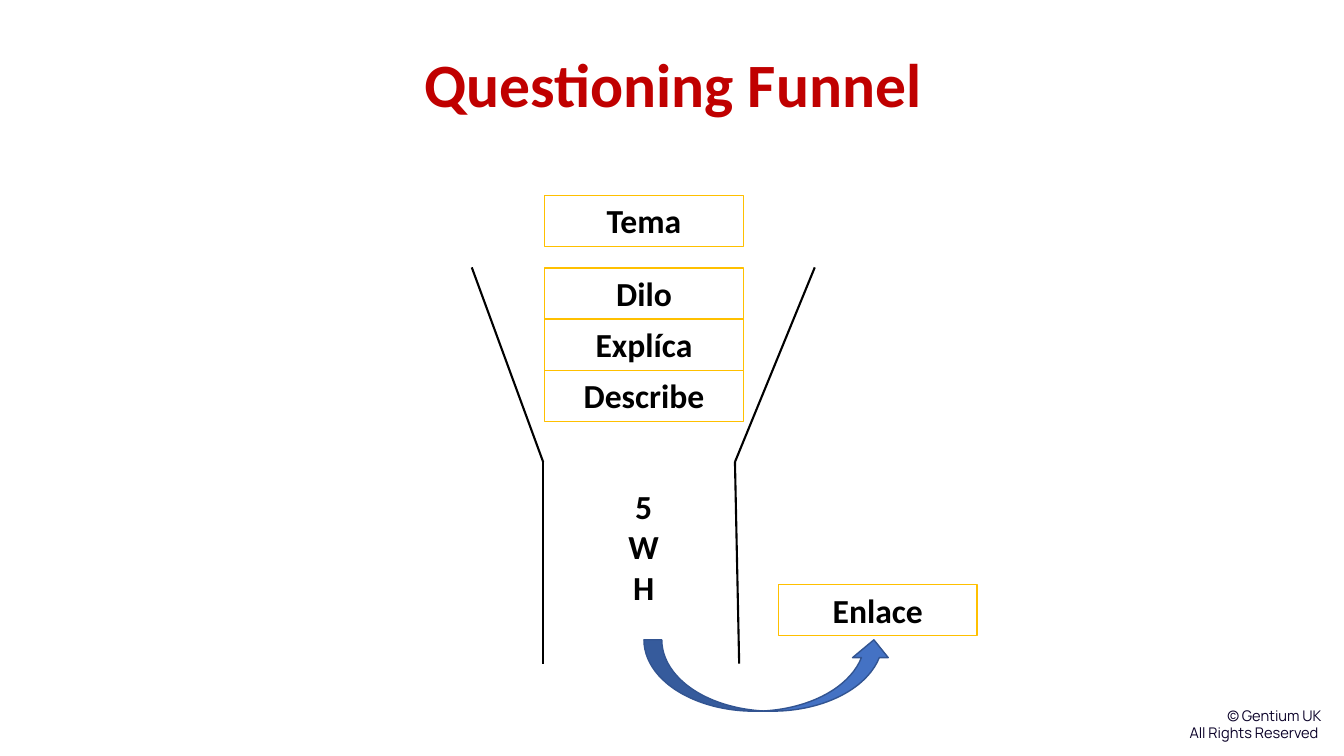
from itertools import pairwise

from lxml.etree import SubElement
from pptx import Presentation
from pptx.dml.color import RGBColor
from pptx.enum.shapes import MSO_CONNECTOR, MSO_SHAPE
from pptx.enum.text import MSO_ANCHOR, MSO_AUTO_SIZE, PP_ALIGN
from pptx.oxml.ns import qn
from pptx.util import Pt

RED = RGBColor(0xC0, 0x00, 0x00)
BLACK = RGBColor(0x00, 0x00, 0x00)
WHITE = RGBColor(0xFF, 0xFF, 0xFF)
AMBER = RGBColor(0xFF, 0xC0, 0x00)
BLUE = RGBColor(0x44, 0x72, 0xC4)
DARK_BLUE = RGBColor(0x32, 0x54, 0x91)
NAVY = RGBColor(0x0A, 0x01, 0x28)

TITLE = {"name": "Calibri", "size": Pt(44), "bold": True}
LABEL = {"name": "Calibri", "size": Pt(24), "bold": True}
SMALL = {"name": "Manrope", "size": Pt(10.5), "bold": False}

BOX_W, BOX_H = 142, 36.5


def box(x, y, w, h):
    """Return a box in points as four lengths."""
    return Pt(x), Pt(y), Pt(w), Pt(h)


def add_run(p, text, fmt, color):
    """Add a formatted run to a paragraph."""
    r = p.add_run()
    r.text = text
    for key, value in fmt.items():
        setattr(r.font, key, value)
    r.font.color.rgb = color


def add_shape(s, kind, bounds, fill, line):
    """Add a filled and outlined shape without shadow."""
    sp = s.shapes.add_shape(kind, *bounds)
    sp.shadow.inherit = False
    sp.fill.solid()
    sp.fill.fore_color.rgb = fill
    sp.line.color.rgb = line
    sp.line.width = Pt(1)
    return sp


def add_title(s, bounds):
    """Place and format the slide title."""
    sp = s.shapes.title
    sp.left, sp.top, sp.width, sp.height = bounds
    tf = sp.text_frame
    tf.vertical_anchor = MSO_ANCHOR.TOP
    tf.auto_size = MSO_AUTO_SIZE.NONE
    p = tf.paragraphs[0]
    p.alignment = PP_ALIGN.CENTER
    p.line_spacing = 0.9
    add_run(p, "Questioning Funnel", TITLE, RED)


def add_label(s, text, x, y):
    """Add an amber-outlined label box."""
    sp = add_shape(s, MSO_SHAPE.RECTANGLE, box(x, y, BOX_W, BOX_H), WHITE, AMBER)
    tf = sp.text_frame
    tf.word_wrap = True
    tf.vertical_anchor = MSO_ANCHOR.TOP
    p = tf.paragraphs[0]
    p.alignment = PP_ALIGN.CENTER
    add_run(p, text, LABEL, BLACK)


def add_wall(s, points):
    """Draw one funnel wall through the given points."""
    for start, end in pairwise(points):
        line = s.shapes.add_connector(
            MSO_CONNECTOR.STRAIGHT, *map(Pt, start + end))
        line.line.color.rgb = BLACK
        line.line.width = Pt(1.5)
        SubElement(line._element.spPr, qn("a:effectLst"))


def add_funnel(s, x, y):
    """Build the funnel with its labels and arrow from its top left corner."""
    neck, end = y + 139, y + 283
    add_wall(s, [(x, y), (x + 51, neck), (x + 51, end)])
    add_wall(s, [(x + 245, y), (x + 188, neck), (x + 191, end)])
    for i, text in enumerate(["Dilo", "Explíca", "Describe"]):
        add_label(s, text, x + 52, y + 0.5 + i * BOX_H)

    tf = s.shapes.add_textbox(*box(x + 103, y + 152.5, 39.6, 94.5)).text_frame
    tf.word_wrap = True
    p = tf.paragraphs[0]
    p.alignment = PP_ALIGN.CENTER
    add_run(p, "5WH", LABEL, BLACK)

    add_shape(s, MSO_SHAPE.CURVED_UP_ARROW, box(x + 123, y + 266, 177, 51),
              BLUE, DARK_BLUE)
    add_label(s, "Enlace", x + 219, y + 226.5)
    add_label(s, "Tema", x + 52, y - 51.5)


def add_rights_notice(s, bounds):
    """Add the right-aligned rights notice."""
    tf = s.shapes.add_textbox(*bounds).text_frame
    tf.word_wrap = False
    for i, text in enumerate(["© Gentium UK", "All Rights Reserved "]):
        p = tf.add_paragraph() if i else tf.paragraphs[0]
        p.alignment = PP_ALIGN.RIGHT
        add_run(p, text, SMALL, NAVY)


def main():
    """Build and save the slide."""
    prs = Presentation()
    prs.slide_width, prs.slide_height = Pt(960), Pt(540)
    s = prs.slides.add_slide(prs.slide_layouts[5])
    add_rights_notice(s, box(836.5, 501, 114.5, 32.5))
    add_title(s, box(157, 35.5, 648, 134.5))
    add_funnel(s, 337, 191)
    prs.save("out.pptx")


if __name__ == "__main__":
    main()
